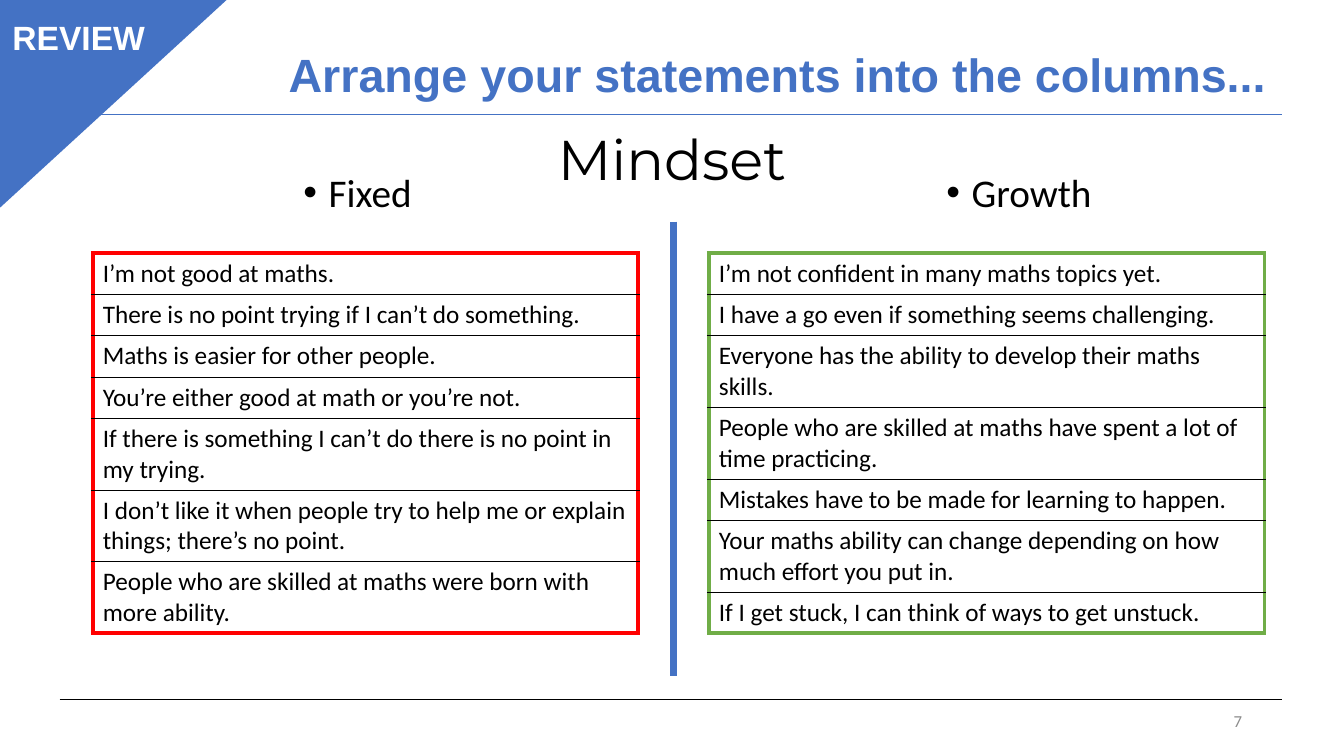
from dataclasses import dataclass

from lxml.etree import SubElement
from pptx import Presentation
from pptx.dml.color import RGBColor
from pptx.enum.shapes import MSO_CONNECTOR, MSO_SHAPE
from pptx.enum.text import MSO_ANCHOR, MSO_AUTO_SIZE, PP_ALIGN
from pptx.oxml.ns import qn
from pptx.util import Inches, Pt

WIDTH, HEIGHT = Inches(13.33), Inches(7.5)


@dataclass(frozen=True)
class Theme:
    blue: str = "4472C4"
    black: str = "000000"
    white: str = "FFFFFF"
    grey: str = "8C8C8C"
    red: str = "FF0000"
    green: str = "70AD47"
    display: str = "Arial"
    body: str = "Calibri"
    accent: str = "Montserrat"
    title_size: float = 33.3
    topic_size: float = 40
    heading_size: float = 28
    label_size: float = 24
    statement_size: float = 18
    number_size: float = 12
    frame_width: float = 3
    rule_width: float = 0.5


THEME = Theme()

FIXED = [
    "I’m not good at maths.",
    "There is no point trying if I can’t do something.",
    "Maths is easier for other people.",
    "You’re either good at math or you’re not.",
    "If there is something I can’t do there is no point in my trying.",
    "I don’t like it when people try to help me or explain things; there’s no point.",
    "People who are skilled at maths were born with more ability.",
]
GROWTH = [
    "I’m not confident in many maths topics yet.",
    "I have a go even if something seems challenging.",
    "Everyone has the ability to develop their maths skills.",
    "People who are skilled at maths have spent a lot of time practicing.",
    "Mistakes have to be made for learning to happen.",
    "Your maths ability can change depending on how much effort you put in.",
    "If I get stuck, I can think of ways to get unstuck.",
]


def across(percent):
    return round(WIDTH * percent / 100)


def down(percent):
    return round(HEIGHT * percent / 100)


def area(left, top, width, height):
    """Turn percentages of the slide into left, top, width and height."""
    return across(left), down(top), across(width), down(height)


def set_attributes(target, values):
    for name, value in values.items():
        setattr(target, name, value)


def place(shape, *box):
    set_attributes(shape, dict(zip(("left", "top", "width", "height"), area(*box))))


def write(frame, text, font, size, color, bold=False, inset=None, anchor=MSO_ANCHOR.TOP, **layout):
    """Write one paragraph; layout holds paragraph attributes."""
    set_attributes(frame, {"word_wrap": True, "auto_size": MSO_AUTO_SIZE.NONE, "vertical_anchor": anchor})
    if inset is not None:
        set_attributes(frame, {f"margin_{side}": inset for side in ("left", "top", "right", "bottom")})
    paragraph = frame.paragraphs[0]
    set_attributes(paragraph, layout)
    run = paragraph.add_run()
    run.text = text
    set_attributes(run.font, {"name": font, "size": Pt(size), "bold": bold})
    run.font.color.rgb = RGBColor.from_string(color)
    return paragraph


def add_line(slide, start, end, color, width):
    line = slide.shapes.add_connector(
        MSO_CONNECTOR.STRAIGHT, across(start[0]), down(start[1]), across(end[0]), down(end[1]))
    line.line.color.rgb = RGBColor.from_string(color)
    line.line.width = Pt(width)
    SubElement(line._element.spPr, qn("a:effectLst"))


def add_blue_shape(slide, preset, box, line_width):
    shape = slide.shapes.add_shape(preset, *area(*box))
    shape.shadow.inherit = False
    shape.fill.solid()
    for paint in (shape.fill.fore_color, shape.line.color):
        paint.rgb = RGBColor.from_string(THEME.blue)
    shape.line.width = Pt(line_width)
    return shape


def add_text(slide, box, *text, **layout):
    write(slide.shapes.add_textbox(*area(*box)).text_frame, *text, **layout)


def fill_heading(placeholder, left, text):
    place(placeholder, left, 22.27, 30.76, 6.53)
    paragraph = write(placeholder.text_frame, text, THEME.body, THEME.heading_size, THEME.black,
                      alignment=PP_ALIGN.CENTER, line_spacing=0.9, space_before=Pt(10))
    properties = paragraph._p.get_or_add_pPr()
    properties.set("marL", str(Inches(0.25)))
    properties.set("indent", str(-Inches(0.25)))
    SubElement(properties, qn("a:buFont"), typeface="Arial")
    SubElement(properties, qn("a:buChar"), char="•")


def set_border(cell, side, color, width):
    line = SubElement(cell._tc.get_or_add_tcPr(), qn(f"a:ln{side}"), w=str(Pt(width)))
    SubElement(SubElement(line, qn("a:solidFill")), qn("a:srgbClr"), val=color)


def add_statements(slide, left, width, statements, color):
    """Add a one-column table with a coloured frame and thin inner rules."""
    row_height = 5.47
    table = slide.shapes.add_table(
        len(statements), 1, *area(left, 33.47, width, row_height * len(statements))).table
    set_attributes(table, {"first_row": False, "horz_banding": False})
    frame, rule = (color, THEME.frame_width), (THEME.black, THEME.rule_width)
    last = len(statements) - 1
    for index, statement in enumerate(statements):
        table.rows[index].height = down(row_height)
        cell = table.cell(index, 0)
        borders = {"L": frame, "R": frame,
                   "T": frame if index == 0 else rule,
                   "B": frame if index == last else rule}
        for side, border in borders.items():
            set_border(cell, side, *border)
        cell.fill.background()
        run = cell.text_frame.paragraphs[0].add_run()
        run.text = statement
        set_attributes(run.font, {"name": THEME.body, "size": Pt(THEME.statement_size)})
        run.font.color.rgb = RGBColor.from_string(THEME.black)


def main():
    presentation = Presentation()
    set_attributes(presentation, {"slide_width": WIDTH, "slide_height": HEIGHT})
    slide = presentation.slides.add_slide(presentation.slide_layouts.get_by_name("Two Content"))
    title, fixed_heading, growth_heading = slide.placeholders

    place(title, 15.75, 4.8, 84.25, 8.13)
    write(title.text_frame, "Arrange your statements into the columns...", THEME.display,
          THEME.title_size, THEME.blue, bold=True, inset=0,
          alignment=PP_ALIGN.CENTER, line_spacing=Pt(46.7))
    for height, color in ((92.53, THEME.black), (15.2, THEME.blue)):
        add_line(slide, (4.43, height), (95.42, height), color, 0.75)
    add_text(slide, (70.67, 92.67, 22.5, 5.33), "7", THEME.body, THEME.number_size, THEME.grey,
             anchor=MSO_ANCHOR.MIDDLE, alignment=PP_ALIGN.RIGHT)

    corner = add_blue_shape(slide, MSO_SHAPE.ISOSCELES_TRIANGLE, (-0.23, -0.27, 17.18, 28), 1)
    corner.adjustments[0] = 0
    corner._element.spPr.xfrm.set("flipV", "1")
    label = add_blue_shape(slide, MSO_SHAPE.RECTANGLE, (0.08, 1.6, 11.55, 6.67), 0.75)
    write(label.text_frame, "REVIEW", THEME.display, THEME.label_size, THEME.white,
          bold=True, alignment=PP_ALIGN.CENTER)

    fill_heading(fixed_heading, 11.55, "Fixed ")
    fill_heading(growth_heading, 60.77, "Growth ")
    add_text(slide, (41.26, 14.93, 17.48, 9.73), "Mindset", THEME.accent, THEME.topic_size,
             THEME.black, inset=0, alignment=PP_ALIGN.CENTER, line_spacing=Pt(56))
    add_line(slide, (50.11, 29.33), (50.11, 89.47), THEME.blue, 4.5)
    add_statements(slide, 6.9, 40.59, FIXED, THEME.red)
    add_statements(slide, 52.74, 41.34, GROWTH, THEME.green)
    presentation.save("out.pptx")


if __name__ == "__main__":
    main()
